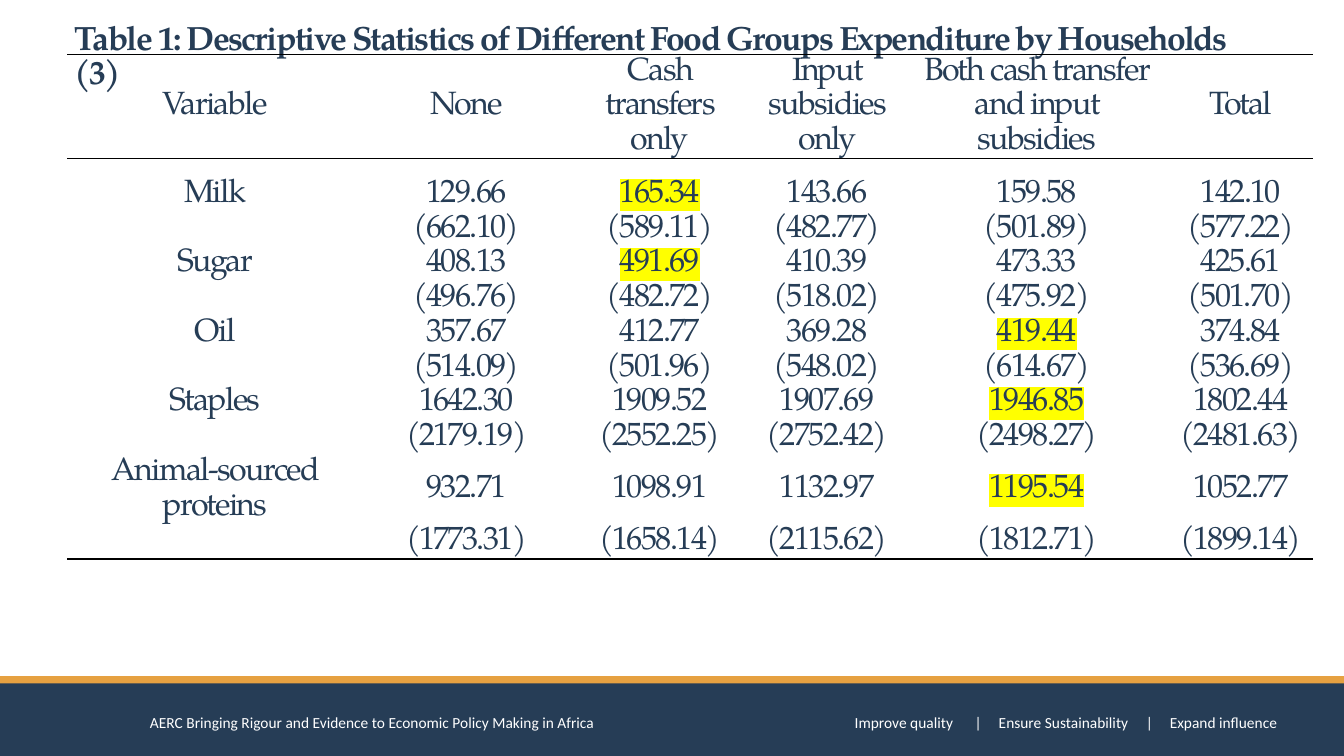
from dataclasses import dataclass

from lxml import etree
from pptx import Presentation
from pptx import util as u
from pptx.dml import color
from pptx.enum import shapes, text
from pptx.oxml import ns

INK = {"navy": "263D56", "gold": "E6A141", "white": "FFFFFF",
       "black": "000000", "mark": "FFFF00"}
SERIF = "TeX Gyre Pagella"
PLAIN = "{2D5ABB26-0587-4C30-8999-92F81FD0307C}"
LEFT = 1.7
COLS = [7.44, 5.23, 4.52, 3.91, 6.66, 3.62]
LINE = 0.87
PITCH = 24.8


@dataclass
class Look:
    size: float
    face: str
    ink: str
    bold: bool = False
    tight: int = 0


@dataclass
class Band:
    left: float
    top: float
    width: float
    height: float
    ink: str


@dataclass
class Food:
    name: str
    means: list[str]
    devs: list[str]
    best: int
    lines: int = 1


TITLE = Look(24, SERIF, "navy", True, -120)
BODY = Look(23, SERIF, "navy", False, -120)
FOOT = Look(11, "Calibri", "white")

BANDS = [Band(0, 17.04, 33.87, 1.37, "gold"),
         Band(-0.1, 17.22, 34.06, 1.9, "navy")]
HEADS = ["Variable", "None", "Cash transfers only", "Input subsidies only",
         "Both cash transfer and input subsidies", "Total"]
FOODS = [
    Food("Milk", ["129.66", "165.34", "143.66", "159.58", "142.10"],
         ["662.10", "589.11", "482.77", "501.89", "577.22"], 2),
    Food("Sugar", ["408.13", "491.69", "410.39", "473.33", "425.61"],
         ["496.76", "482.72", "518.02", "475.92", "501.70"], 2),
    Food("Oil", ["357.67", "412.77", "369.28", "419.44", "374.84"],
         ["514.09", "501.96", "548.02", "614.67", "536.69"], 4),
    Food("Staples", ["1642.30", "1909.52", "1907.69", "1946.85", "1802.44"],
         ["2179.19", "2552.25", "2752.42", "2498.27", "2481.63"], 4),
    Food("Animal-sourced proteins",
         ["932.71", "1098.91", "1132.97", "1195.54", "1052.77"],
         ["1773.31", "1658.14", "2115.62", "1812.71", "1899.14"], 4, 2),
]
PARTS = ["AERC Bringing Rigour and Evidence to Economic Policy Making in Africa",
         "Improve quality", "|", "Ensure Sustainability", "|", "Expand influence"]
STOPS = [17.76, 20.78, 21.39, 25.1, 25.7]


def add_node(root, tag: str, **attrs: str):
    return etree.SubElement(root, ns.qn(tag), attrs)


def add_run(para, words: str, look: Look, mark: bool = False) -> None:
    run = para.add_run()
    run.text = words
    font = run.font
    font.size = u.Pt(look.size)
    font.bold = look.bold
    font.color.rgb = color.RGBColor.from_string(INK[look.ink])
    props = run._r.get_or_add_rPr()
    if look.tight:
        props.set("spc", str(look.tight))
    if mark:
        add_node(add_node(props, "a:highlight"), "a:srgbClr", val=INK["mark"])
    font.name = look.face


def add_band(slide, band: Band) -> None:
    box = [u.Cm(n) for n in (band.left, band.top, band.width, band.height)]
    shape = slide.shapes.add_shape(shapes.MSO_SHAPE.RECTANGLE, *box)
    shape.shadow.inherit = False
    shape.fill.solid()
    shape.fill.fore_color.rgb = color.RGBColor.from_string(INK[band.ink])
    shape.line.fill.background()


def add_text(slide, left: float, top: float, width: float, height: float):
    box = slide.shapes.add_textbox(*[u.Cm(n) for n in (left, top, width, height)])
    frame = box.text_frame
    frame.word_wrap = True
    para = frame.paragraphs[0]
    para.line_spacing = 0.85
    return frame, para


def add_title(slide) -> None:
    _, para = add_text(slide, 1.63, 0.46, 31.39, 0.91)
    add_run(para, "Table 1: Descriptive Statistics of Different Food Groups "
            "Expenditure by Households", TITLE)
    para.add_line_break()
    add_run(para, "(3)", TITLE)


def add_foot(slide) -> None:
    frame, para = add_text(slide, 3.65, 17.91, 29.46, 0.81)
    frame.margin_left = frame.margin_right = u.Cm(0.13)
    frame.margin_top = frame.margin_bottom = u.Cm(0.13)
    tabs = add_node(para._p.get_or_add_pPr(), "a:tabLst")
    for stop in STOPS:
        add_node(tabs, "a:tab", pos=str(u.Cm(stop)), algn="l")
    add_run(para, "\t".join(PARTS), FOOT)


def rule_cell(cell, sides: str) -> None:
    props = cell._tc.get_or_add_tcPr()
    for side in sides:
        edge = etree.Element(ns.qn(f"a:ln{side}"), w=str(u.Pt(1)))
        add_node(add_node(edge, "a:solidFill"), "a:srgbClr", val=INK["black"])
        props.insert(sides.index(side), edge)


def fill_cell(cell, words: str, mark: bool, low: bool) -> None:
    cell.fill.background()
    cell.margin_left = cell.margin_right = u.Cm(0.19)
    cell.margin_top = cell.margin_bottom = 0
    anchor = text.MSO_ANCHOR
    cell.vertical_anchor = anchor.BOTTOM if low else anchor.MIDDLE
    para = cell.text_frame.paragraphs[0]
    para.alignment = text.PP_ALIGN.CENTER
    para.line_spacing = u.Pt(PITCH)
    if words:
        add_run(para, words, BODY, mark)


def add_grid(slide, top: float, rows: list[list[str]], highs: list[float],
             marks: set[tuple[int, int]], low: bool, sides: str) -> None:
    frame = slide.shapes.add_table(len(rows), len(COLS), u.Cm(LEFT), u.Cm(top),
                                   u.Cm(sum(COLS)), u.Cm(sum(highs)))
    grid = frame.table
    grid.first_row = grid.horz_banding = False
    grid._tbl.tblPr[0].text = PLAIN
    for col, width in zip(grid.columns, COLS):
        col.width = u.Cm(width)
    for r, (row, high) in enumerate(zip(rows, highs)):
        grid.rows[r].height = u.Cm(high)
        for c, words in enumerate(row):
            cell = grid.cell(r, c)
            fill_cell(cell, words, (r, c) in marks, low and c == 0)
            if r == len(rows) - 1:
                rule_cell(cell, sides)


def main() -> None:
    deck = Presentation()
    deck.slide_width, deck.slide_height = u.Cm(33.87), u.Cm(19.05)
    slide = deck.slides.add_slide(deck.slide_layouts[6])
    for band in BANDS:
        add_band(slide, band)
    add_foot(slide)
    add_title(slide)
    rows, highs, marks = [], [], set()
    for food in FOODS:
        marks.add((len(rows), food.best))
        rows += [[food.name, *food.means], ["", *[f"({dev})" for dev in food.devs]]]
        highs += [food.lines * LINE, LINE]
    add_grid(slide, 4.45, rows, highs, marks, True, "B")
    add_grid(slide, 1.37, [HEADS], [3 * LINE], set(), False, "TB")
    deck.save("out.pptx")


if __name__ == "__main__":
    main()
